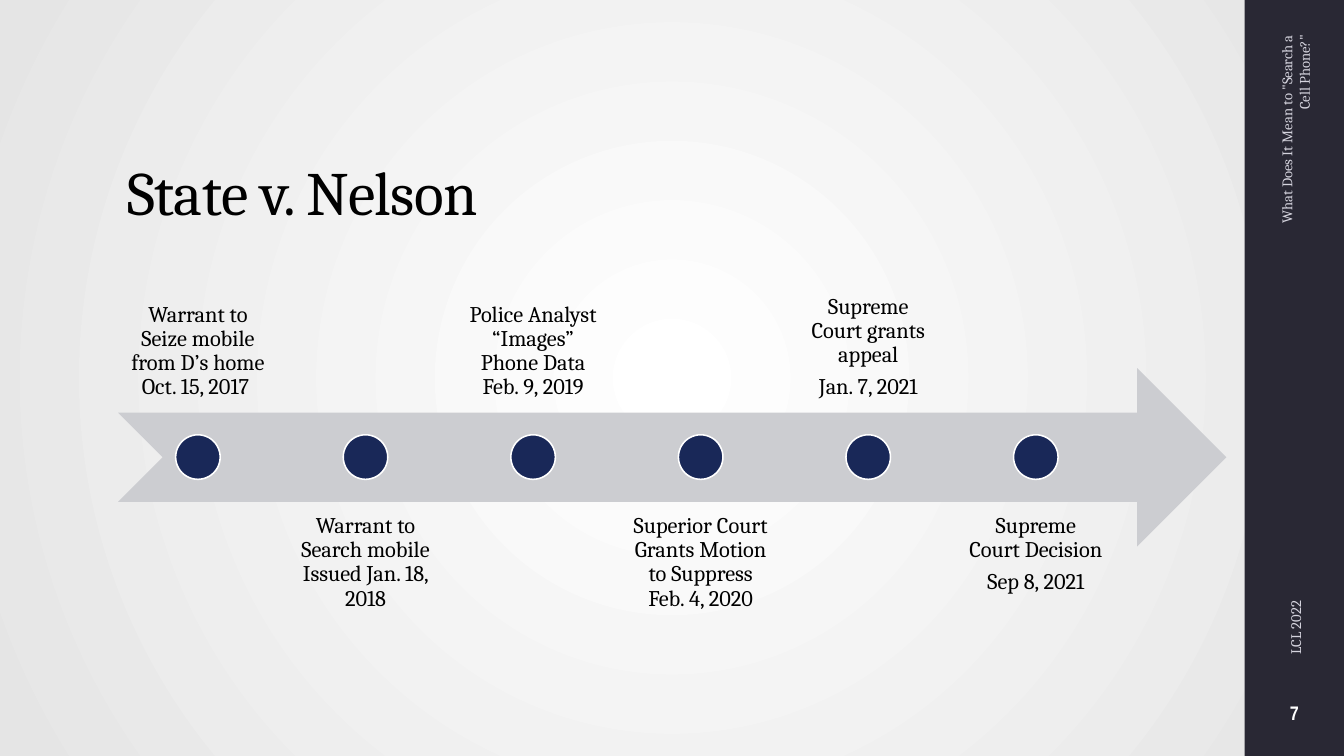
from lxml import etree
from pptx import Presentation
from pptx.dml.color import RGBColor
from pptx.enum.shapes import MSO_SHAPE
from pptx.enum.text import MSO_ANCHOR, PP_ALIGN
from pptx.oxml.ns import qn
from pptx.util import Pt

RECT, DOT, ARROW = MSO_SHAPE.RECTANGLE, MSO_SHAPE.OVAL, MSO_SHAPE.NOTCHED_RIGHT_ARROW
TOP, MID, BASE = MSO_ANCHOR.TOP, MSO_ANCHOR.MIDDLE, MSO_ANCHOR.BOTTOM
LEFT, MIDDLE, RIGHT = PP_ALIGN.LEFT, PP_ALIGN.CENTER, PP_ALIGN.RIGHT

COLORS = {"white": "FFFFFF", "edge": "E5E5E5", "bar": "292834", "arrow": "CCCDD1",
          "dot": "192858", "ink": "000000", "note": "D4D3DD"}


def color(name):
    return RGBColor.from_string(COLORS[name])


class Deck:
    font = "Cambria"

    def __init__(self, wide, high):
        self.prs = Presentation()
        self.prs.slide_width, self.prs.slide_height = Pt(wide), Pt(high)
        self.slide = self.prs.slides.add_slide(self.prs.slide_layouts[6])

    def glow(self, inner, outer):
        """Fill the background with a round gradient."""
        fill = self.slide.background.fill
        fill.gradient()
        for stop, name, place in zip(fill.gradient_stops, (inner, outer), (0, 1)):
            stop.color.rgb = color(name)
            stop.position = place
        grad = self.slide.background._cSld.find(".//" + qn("a:gradFill"))
        lin = grad.find(qn("a:lin"))
        ring = etree.Element(qn("a:path"), {"path": "circle"})
        etree.SubElement(ring, qn("a:fillToRect"), dict.fromkeys("ltrb", "100000"))
        grad.replace(lin, ring)

    def shape(self, kind, box, fill, line=None):
        item = self.slide.shapes.add_shape(kind, *map(Pt, box))
        item.shadow.inherit = False
        item.fill.solid()
        item.fill.fore_color.rgb = color(fill)
        if line:
            item.line.color.rgb = color(line)
            item.line.width = Pt(1.1)
        else:
            item.line.fill.background()

    def text(self, words, box, size, ink, align=LEFT, anchor=MID, inset=(7.2, 3.6),
             font=None, bold=False, turn=0, lead=1, after=0, track=0):
        item = self.slide.shapes.add_textbox(*map(Pt, box))
        item.rotation = turn
        frame = item.text_frame
        frame.word_wrap = True
        frame.vertical_anchor = anchor
        frame.margin_left = frame.margin_right = Pt(inset[0])
        frame.margin_top = frame.margin_bottom = Pt(inset[1])
        frame.text = words
        for para in frame.paragraphs:
            para.alignment = align
            para.line_spacing = lead
            para.space_after = Pt(after)
            for run in para.runs:
                run.font.name = font or self.font
                run.font.size = Pt(size)
                run.font.bold = bold
                run.font.color.rgb = color(ink)
                if track:
                    run.font._element.set("spc", str(int(track * 100)))

    def save(self):
        self.prs.save("out.pptx")


def main():
    deck = Deck(960, 540)

    # Background, side bar and title
    deck.glow("white", "edge")
    deck.shape(RECT, (889, 0, 71, 540), "bar")
    deck.text("State v. Nelson", (84, 40.3, 792, 126.7), 44, "ink",
              anchor=BASE, lead=0.9, track=-0.5)

    # Timeline: labels alternate above and below the arrow
    deck.shape(ARROW, (84.4, 263, 791.6, 127.4), "arrow")
    events = [
        "Warrant to Seize mobile from D’s home Oct. 15, 2017 ",
        "Warrant to Search mobile Issued Jan. 18, 2018",
        "Police Analyst “Images” Phone Data Feb. 9, 2019",
        "Superior Court Grants Motion to Suppress Feb. 4, 2020",
        "Supreme Court grants appeal\nJan. 7, 2021",
        "Supreme Court Decision\nSep 8, 2021",
    ]
    first, step, size, wide = 141.4, 119.7, 31.8, 113.8
    for i, event in enumerate(events):
        center = first + i * step
        top, anchor = (358.4, TOP) if i % 2 else (167.2, BASE)
        deck.text(event, (center - wide / 2, top, wide, 127.4), 16, "ink", MIDDLE,
                  anchor, inset=(8.96, 8.96), lead=0.9, after=5.6)
        deck.shape(DOT, (center - size / 2, 310.6, size, size), "dot", "white")

    # Side bar notes
    deck.text("7", (889, 486, 71, 46.8), 14, "white", MIDDLE,
              inset=(3.6, 3.6), font="Arial Narrow", bold=True)
    deck.text("LCL 2022", (784.1, 319, 282.2, 28.8), 10.5, "note", turn=270)
    deck.text('What Does It Mean to "Search a Cell Phone?"', (850.3, 78.5, 149.8, 28.8),
              10.5, "note", RIGHT, turn=270)

    deck.save()


if __name__ == "__main__":
    main()
